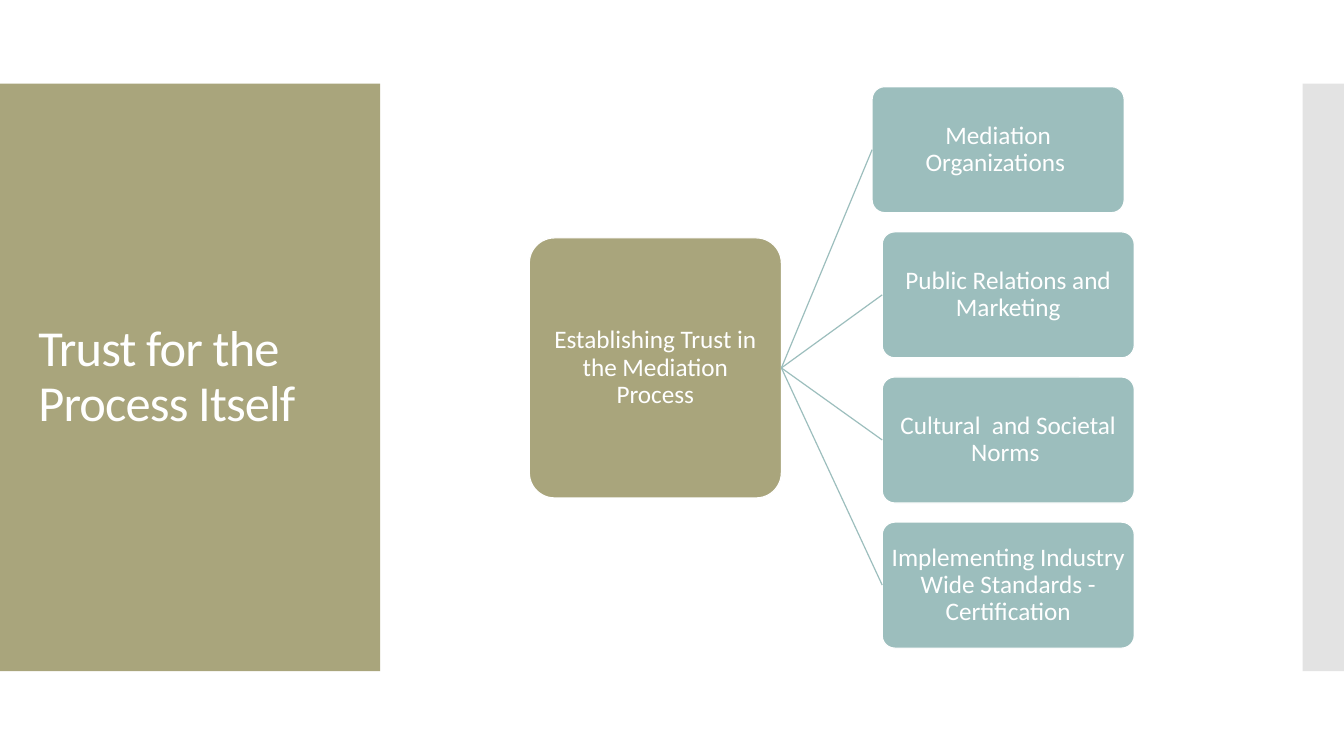
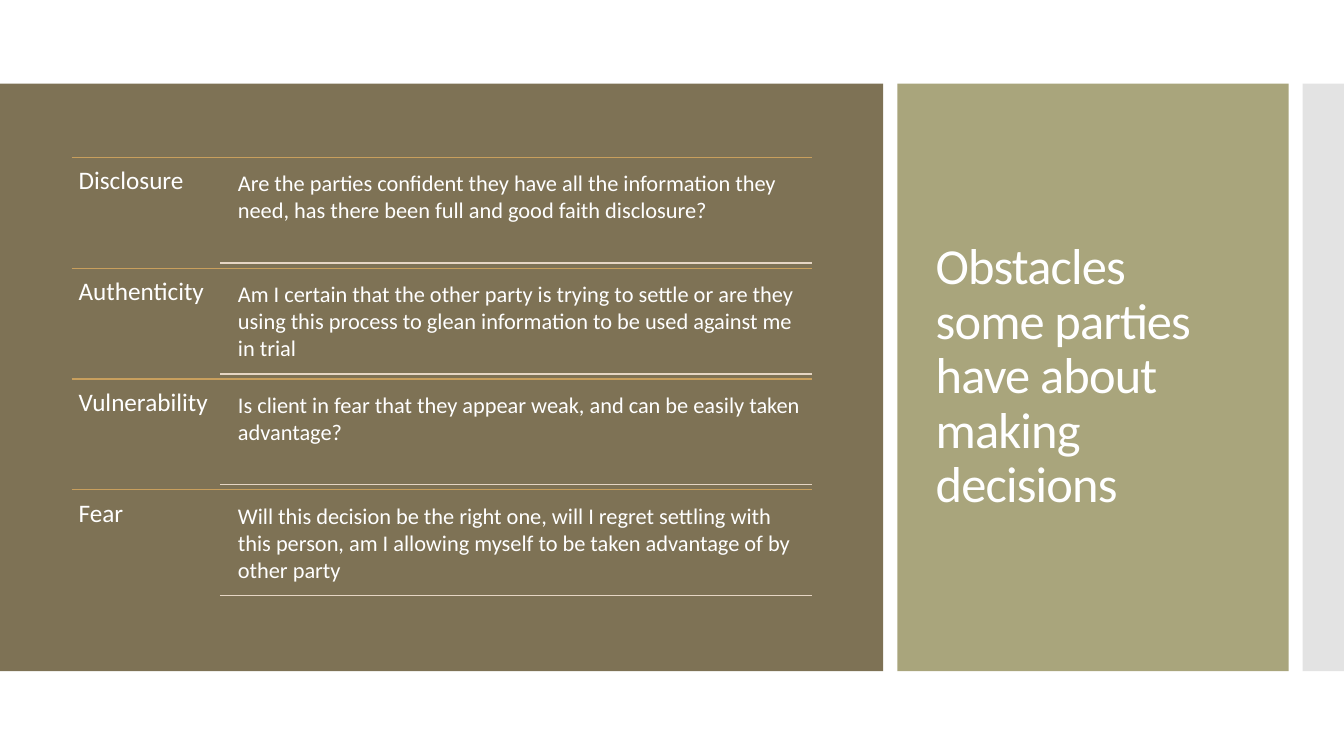
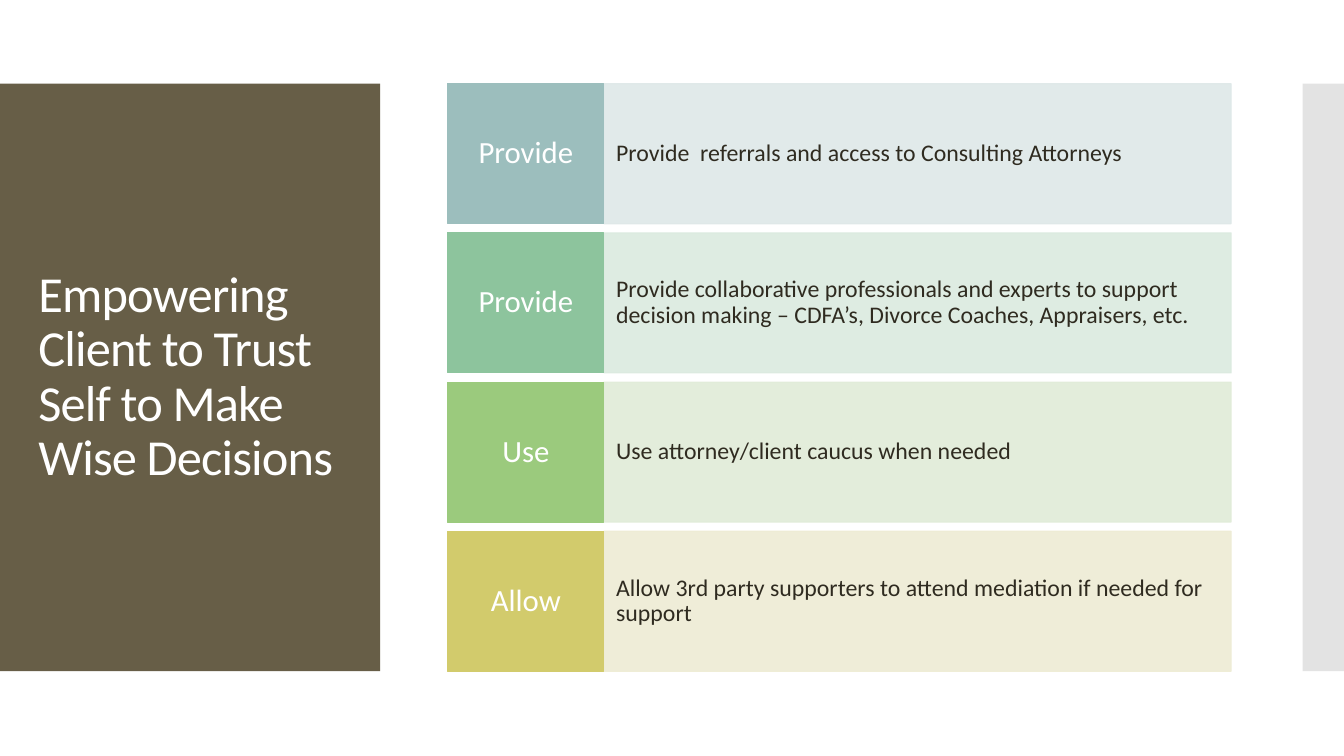
from lxml import etree
from pptx import Presentation
from pptx.dml.color import RGBColor
from pptx.enum import shapes, text
from pptx.oxml import ns
from pptx.util import Inches, Pt

WHITE = RGBColor(0xFF, 0xFF, 0xFF)
INK = RGBColor(0x2F, 0x2B, 0x20)
OLIVE = RGBColor(0xA9, 0xA5, 0x7C)
BROWN = RGBColor(0x7E, 0x72, 0x55)
DARK_BROWN = RGBColor(0x67, 0x5E, 0x47)
GRAY = RGBColor(0xC8, 0xC8, 0xC8)
TEAL = RGBColor(0x9C, 0xBE, 0xBD)
GREEN = RGBColor(0x8D, 0xC4, 0x9D)
LIME = RGBColor(0x9B, 0xCA, 0x7D)
YELLOW = RGBColor(0xD2, 0xCB, 0x6C)
PALE_TEAL = RGBColor(0xDE, 0xE8, 0xE8)
PALE_GREEN = RGBColor(0xDB, 0xEA, 0xDF)
PALE_LIME = RGBColor(0xE0, 0xEC, 0xD8)
PALE_YELLOW = RGBColor(0xEE, 0xEC, 0xD4)
GOLD = RGBColor(0xC8, 0x9F, 0x5D)
CREAM = RGBColor(0xE6, 0xD6, 0xC4)

FONT = "Calibri"
BAND_TOP, BAND_HEIGHT = 0.83, 5.83
RECTANGLE = shapes.MSO_SHAPE.RECTANGLE
ROUNDED = shapes.MSO_SHAPE.ROUNDED_RECTANGLE
LEFT, CENTER = text.PP_ALIGN.LEFT, text.PP_ALIGN.CENTER
TOP, MIDDLE = text.MSO_ANCHOR.TOP, text.MSO_ANCHOR.MIDDLE


def write(box, words, size=18, color=WHITE, align=LEFT, anchor=MIDDLE,
          spacing=0.9, inset=(0.1, 0.05), tracking=None):
    frame = box.text_frame
    frame.word_wrap = True
    frame.auto_size = text.MSO_AUTO_SIZE.NONE
    frame.vertical_anchor = anchor
    frame.margin_left = frame.margin_right = Inches(inset[0])
    frame.margin_top = frame.margin_bottom = Inches(inset[1])
    para = frame.paragraphs[0]
    para.alignment = align
    para.line_spacing = spacing
    span = para.add_run()
    span.text = words
    span.font.name = FONT
    span.font.size = Pt(size)
    span.font.color.rgb = color
    if tracking is not None:
        span.font._element.set("spc", str(tracking))


def add_box(slide, left, top, width, height, fill, kind=RECTANGLE,
            line=None, line_width=0.75, opacity=100):
    box = slide.shapes.add_shape(
        kind, Inches(left), Inches(top), Inches(width), Inches(height))
    box.shadow.inherit = False
    box.fill.solid()
    box.fill.fore_color.rgb = fill
    if line is None:
        box.line.fill.background()
    else:
        box.line.color.rgb = line
        box.line.width = Pt(line_width)
    if kind == ROUNDED:
        box.adjustments[0] = 0.1
    if opacity < 100:
        for color in box.element.spPr.iter(ns.qn("a:srgbClr")):
            alpha = etree.SubElement(color, ns.qn("a:alpha"))
            alpha.set("val", str(opacity * 1000))
    return box


deck = Presentation()
deck.slide_width, deck.slide_height = Inches(13.33), Inches(7.5)

# Title panel and side band of every slide: title, left, width, colour
panels = [
    ("Trust for the Process Itself", 0, 3.77, OLIVE),
    ("Obstacles some parties have about making decisions", 8.9, 3.88, OLIVE),
    ("Empowering Client to Trust Self to Make Wise Decisions", 0, 3.77, DARK_BROWN),
]
slides = []
for words, left, width, color in panels:
    slide = deck.slides.add_slide(deck.slide_layouts[5])
    add_box(slide, left, BAND_TOP, width, BAND_HEIGHT, color)
    add_box(slide, 12.92, BAND_TOP, 0.41, BAND_HEIGHT, GRAY, opacity=50)
    title = slide.shapes.title
    title.left, title.top = Inches(left + 0.28), Inches(1.23)
    title.width, title.height = Inches(3.22), Inches(5.03)
    write(title, words, size=36, tracking=-60)
    slide.shapes.element.append(title.element)  # bring in front of the panel
    slides.append(slide)
trust, obstacles, empowering = slides

# Slide 1: one root branching to four topics
topics = [
    (8.65, "Mediation Organizations "),
    (8.75, "Public Relations and Marketing"),
    (8.75, "Cultural  and Societal Norms "),
    (8.75, "Implementing Industry Wide Standards - Certification"),
]
outline = {"kind": ROUNDED, "line": WHITE, "line_width": 0.85}
root = add_box(trust, 5.25, 2.36, 2.5, 2.58, OLIVE, **outline)
write(root, "Establishing Trust in the Mediation Process", align=CENTER, inset=(0.08, 0.08))
for row, (left, words) in enumerate(topics):
    topic = add_box(trust, left, 0.86 + row * 1.44, 2.5, 1.25, TEAL, **outline)
    write(topic, words, align=CENTER, inset=(0.05, 0.05))
    branch = trust.shapes.add_connector(shapes.MSO_CONNECTOR.STRAIGHT, 0, 0, 0, 0)
    branch.begin_connect(root, 3)
    branch.end_connect(topic, 1)
    branch.line.color.rgb = TEAL
    branch.line.width = Pt(0.85)
    etree.SubElement(branch.element.spPr, ns.qn("a:effectLst"))

# Slide 2: ruled list of obstacles
add_box(obstacles, 0, BAND_TOP, 8.76, BAND_HEIGHT, BROWN)
concerns = [
    ("Disclosure", "Are the parties confident they have all the information they need, "
     "has there been full and good faith disclosure?"),
    ("Authenticity", "Am I certain that the other party is trying to settle or are they "
     "using this process to glean information to be used against me in trial"),
    ("Vulnerability", "Is client in fear that they appear weak, and can be easily taken "
     "advantage?"),
    ("Fear", "Will this decision be the right one, will I regret settling with this person, "
     "am I allowing myself to be taken advantage of by other party"),
]
for row, (name, question) in enumerate(concerns):
    top = 1.56 + row * 1.1
    for left, y, color, width in [(0.71, top, GOLD, 0.75), (2.18, top + 1.05, CREAM, 0.85)]:
        rule = obstacles.shapes.add_connector(
            shapes.MSO_CONNECTOR.STRAIGHT, Inches(left), Inches(y), Inches(8.05), Inches(y))
        rule.line.color.rgb = color
        rule.line.width = Pt(width)
        etree.SubElement(rule.element.spPr, ns.qn("a:effectLst"))
    for words, size, left, y, width, height in [
            (name, 18, 0.71, top, 1.47, 1.1), (question, 16, 2.29, top + 0.05, 5.76, 1)]:
        box = obstacles.shapes.add_textbox(
            Inches(left), Inches(y), Inches(width), Inches(height))
        write(box, words, size=size, anchor=TOP, spacing=1, inset=(0.07, 0.07))

# Slide 3: four labelled actions
actions = [
    ("Provide", TEAL, PALE_TEAL, "Provide  referrals and access to Consulting Attorneys"),
    ("Provide", GREEN, PALE_GREEN, "Provide collaborative professionals and experts to support "
     "decision making – CDFA’s, Divorce Coaches, Appraisers, etc."),
    ("Use", LIME, PALE_LIME, "Use attorney/client caucus when needed"),
    ("Allow", YELLOW, PALE_YELLOW, "Allow 3rd party supporters to attend mediation if needed "
     "for support"),
]
for row, (verb, color, pale, sentence) in enumerate(actions):
    top = BAND_TOP + row * 1.48
    detail = add_box(empowering, 5.99, top, 6.22, 1.39, pale, line=pale, opacity=90)
    write(detail, sentence, size=17, color=INK, inset=(0.12, 0.35))
    label = add_box(empowering, 4.44, top, 1.55, 1.39, color, line=color)
    write(label, verb, size=22, align=CENTER, inset=(0.08, 0.14))

deck.save("out.pptx")
